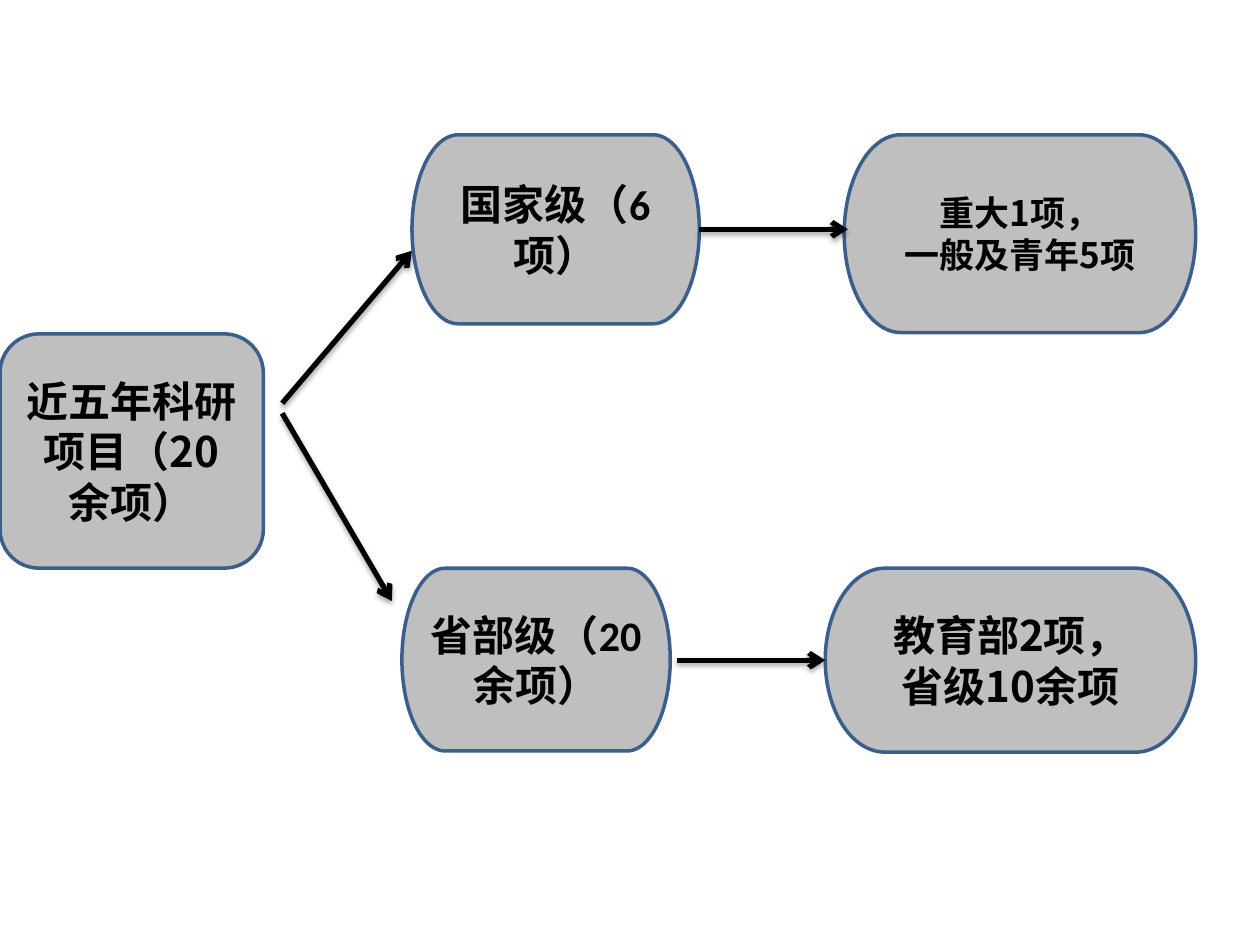
from lxml import etree
from pptx import Presentation
from pptx import util as u
from pptx.dml.color import RGBColor
from pptx.enum import shapes, text
from pptx.oxml import parse_xml
from pptx.oxml.ns import nsdecls, qn

COLORS = {"fill": "BFBFBF", "border": "3A5F8C", "ink": "000000"}
CJK = "Noto Sans CJK SC"
LATIN = "Calibri"
LEFT, RIGHT = 1, 3


class FlowSlide:
    def __init__(self, slide):
        self.slide = slide

    def color(self, name):
        return RGBColor.from_string(COLORS[name])

    def node(self, kind, left, top, width, height, label, size=24, font=CJK):
        box = self.slide.shapes.add_shape(
            kind, *(u.Inches(n) for n in (left, top, width, height)))
        box.shadow.inherit = False
        box.fill.solid()
        box.fill.fore_color.rgb = self.color("fill")
        box.line.color.rgb = self.color("border")
        box.line.width = u.Pt(2)
        frame = box.text_frame
        frame.text = label
        frame.word_wrap = True
        frame.vertical_anchor = text.MSO_ANCHOR.MIDDLE
        for paragraph in frame.paragraphs:
            paragraph.alignment = text.PP_ALIGN.CENTER
            for run in paragraph.runs:
                run.font.size = u.Pt(size)
                run.font.bold = True
                run.font.color.rgb = self.color("ink")
                run.font.name = font
                east_asian = etree.SubElement(run.font._element, qn("a:ea"))
                east_asian.set("typeface", CJK)
        return box

    def arrow(self, start, end, source=None, target=None):
        line = self.slide.shapes.add_connector(
            shapes.MSO_CONNECTOR.STRAIGHT,
            *(u.Inches(n) for n in (*start, *end)))
        if source is not None:
            line.begin_connect(source, RIGHT)
        if target is not None:
            line.end_connect(target, LEFT)
        line.line.color.rgb = self.color("ink")
        line.line.width = u.Pt(3)
        properties = line._element.spPr
        tail = etree.SubElement(properties.find(qn("a:ln")), qn("a:tailEnd"))
        tail.set("type", "arrow")
        properties.append(parse_xml(
            f'<a:effectLst {nsdecls("a")}><a:outerShdw blurRad="{u.Pt(3.1)}" '
            f'dist="{u.Pt(1.8)}" dir="5400000" rotWithShape="0">'
            f'<a:srgbClr val="{COLORS["ink"]}"><a:alpha val="35000"/></a:srgbClr>'
            '</a:outerShdw></a:effectLst>'))


def main():
    deck = Presentation()
    deck.slide_width, deck.slide_height = u.Inches(10), u.Inches(7.5)
    flow = FlowSlide(deck.slides.add_slide(deck.slide_layouts[6]))
    rounded = shapes.MSO_SHAPE.FLOWCHART_ALTERNATE_PROCESS
    pill = shapes.MSO_SHAPE.FLOWCHART_TERMINATOR

    flow.node(rounded, 0, 2.65, 2.09, 1.86, "近五年科研项目（20余项）")
    flow.arrow((2.24, 3.2), (3.27, 1.99))
    flow.arrow((2.24, 3.28), (3.11, 4.77))
    provincial_detail = flow.node(
        pill, 6.55, 4.51, 2.94, 1.46, "教育部2项，\n省级10余项")
    flow.node(pill, 6.7, 1.07, 2.79, 1.57, "重大1项，\n一般及青年5项", size=20)
    national = flow.node(
        pill, 3.27, 1.07, 2.28, 1.5, "国家级（6项）", font=LATIN)
    flow.node(pill, 3.19, 4.51, 2.13, 1.45, "省部级（20余项）", font=LATIN)
    flow.arrow((5.55, 1.82), (6.73, 1.82), source=national)
    flow.arrow((5.37, 5.24), (6.55, 5.24), target=provincial_detail)

    deck.save("out.pptx")


if __name__ == "__main__":
    main()
